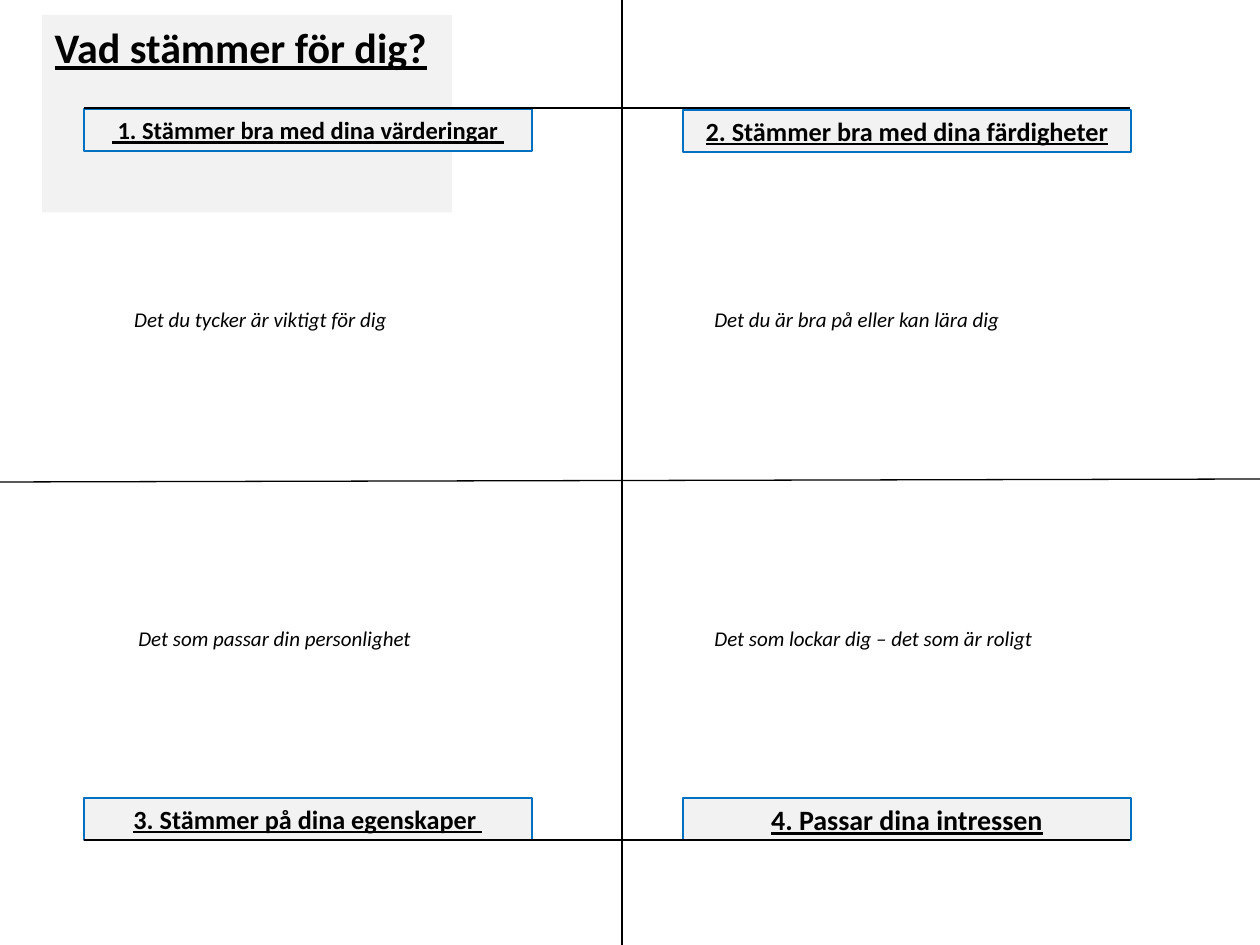
"""Build a four-quadrant slide asking what suits you."""
from lxml import etree
from pptx import Presentation
from pptx import util as u
from pptx.dml.color import RGBColor
from pptx.enum import shapes, text
from pptx.oxml.ns import qn

TITLE = "Vad stämmer för dig?"
TITLE_BOX = (42, 15, 410, 63)
HEADINGS = [
    (" 1. Stämmer bra med dina värderingar ", 14, 84, 109),
    ("2. Stämmer bra med dina färdigheter", 15, 683, 110),
    ("3. Stämmer på dina egenskaper ", 15, 84, 798),
    ("4. Passar dina intressen", 16, 683, 798),
]
HEADING_SIZE = (448, 42)
HINTS = [
    (" Det du tycker är viktigt för dig", 117, 300, 285),
    ("Det du är bra på eller kan lära dig", 702, 300, 314),
    ("Det som passar din personlighet", 126, 619, 300),
    ("Det som lockar dig – det som är roligt", 702, 619, 357),
]
HINT_HEIGHT = 38
RULES = [
    (622, 0, 622, 945),
    (0, 482, 1260, 479),
    (84, 840, 1130, 840),
    (84, 108, 1130, 108),
]
BLACK, WHITE, GREY, BLUE = "000000", "FFFFFF", "F2F2F2", "0070C0"


def px(length):
    return u.Emu(round(length * 914400 / 126))


def paint(fill, color):
    fill.solid()
    fill.fore_color.rgb = RGBColor.from_string(color)


def write(box, words, size, bold=False, underline=False, italic=False,
          align=text.PP_ALIGN.LEFT, anchor=text.MSO_ANCHOR.TOP, wrap=False):
    frame = box.text_frame
    frame.word_wrap = wrap
    frame.auto_size = text.MSO_AUTO_SIZE.NONE if wrap else text.MSO_AUTO_SIZE.SHAPE_TO_FIT_TEXT
    frame.vertical_anchor = anchor
    paragraph = frame.paragraphs[0]
    paragraph.alignment = align
    run = paragraph.add_run()
    run.text = words
    font = run.font
    font.name, font.size = "Calibri", u.Pt(size)
    font.bold, font.underline, font.italic = bold, underline, italic
    paint(font.fill, BLACK)
    return run


def outline(run, color, width):
    line = etree.Element(qn("a:ln"), w=str(u.Pt(width)))
    solid = etree.SubElement(line, qn("a:solidFill"))
    etree.SubElement(solid, qn("a:srgbClr"), val=color)
    run.font._element.insert(0, line)


def add_heading(slide, words, size, left, top):
    heading = slide.shapes.add_shape(
        shapes.MSO_SHAPE.RECTANGLE, *map(px, (left, top, *HEADING_SIZE)))
    heading.shadow.inherit = False
    paint(heading.fill, GREY)
    paint(heading.line.fill, BLUE)
    heading.line.width = u.Pt(1)
    run = write(heading, words, size, bold=True, underline=True, wrap=True,
                align=text.PP_ALIGN.CENTER, anchor=text.MSO_ANCHOR.MIDDLE)
    outline(run, WHITE, 0.75)


def add_hint(slide, words, left, top, width):
    hint = slide.shapes.add_textbox(*map(px, (left, top, width, HINT_HEIGHT)))
    paint(hint.fill, WHITE)
    write(hint, words, 12, italic=True)


def add_rule(slide, ends):
    rule = slide.shapes.add_connector(shapes.MSO_CONNECTOR.STRAIGHT, *map(px, ends))
    paint(rule.line.fill, BLACK)
    rule.line.width = u.Pt(0.75)
    etree.SubElement(rule._element.spPr, qn("a:effectLst"))


def main():
    deck = Presentation()
    deck.slide_width, deck.slide_height = px(1260), px(945)
    slide = deck.slides.add_slide(deck.slide_layouts[5])
    title = slide.shapes.title
    title.left, title.top, title.width, title.height = map(px, TITLE_BOX)
    paint(title.fill, GREY)
    write(title, TITLE, 24, bold=True, underline=True)
    for heading in HEADINGS:
        add_heading(slide, *heading)
    for hint in HINTS:
        add_hint(slide, *hint)
    for ends in RULES:
        add_rule(slide, ends)
    deck.save("out.pptx")


if __name__ == "__main__":
    main()
